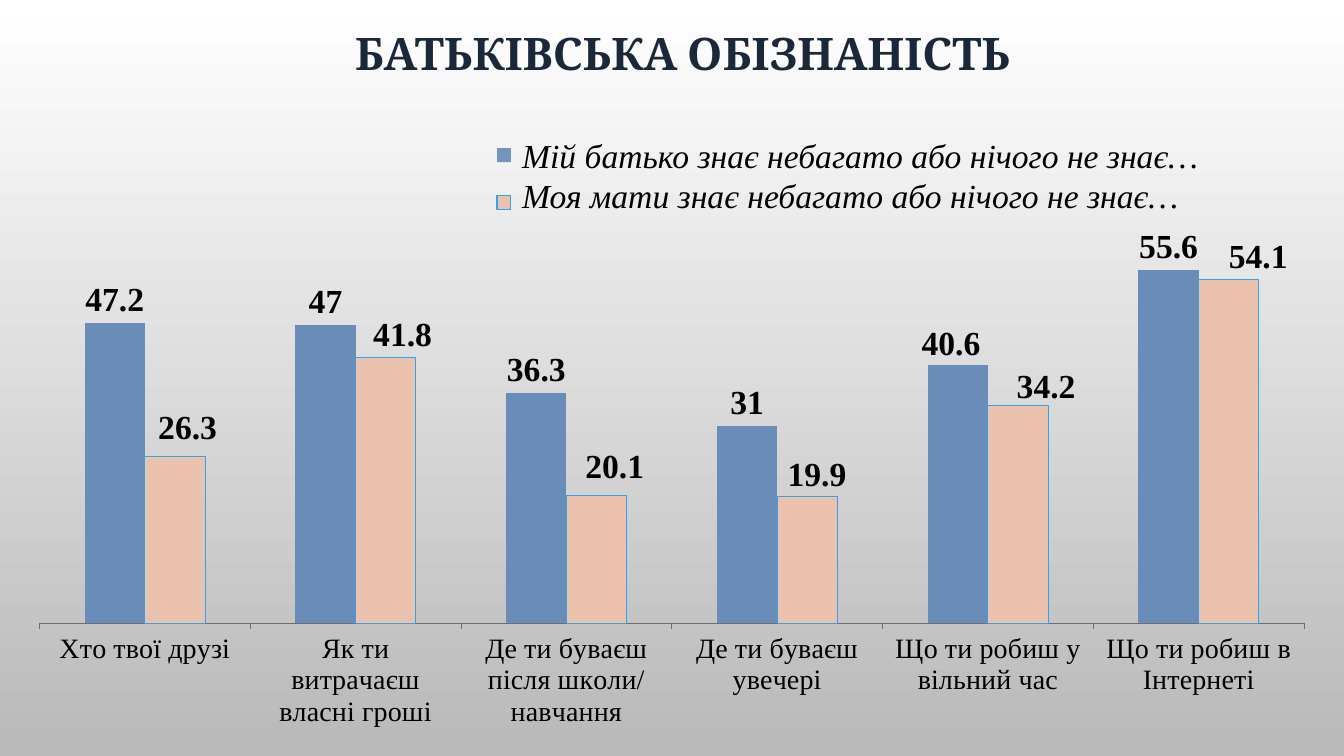
from lxml import etree
from pptx import Presentation
from pptx.chart.data import CategoryChartData
from pptx.dml.color import RGBColor
from pptx.enum.chart import XL_CHART_TYPE, XL_LABEL_POSITION, XL_TICK_MARK
from pptx.enum.shapes import MSO_SHAPE
from pptx.enum.text import MSO_ANCHOR, MSO_AUTO_SIZE, PP_ALIGN
from pptx.oxml.ns import qn
from pptx.util import Pt

COLUMNS = XL_CHART_TYPE.COLUMN_CLUSTERED
OUTSIDE_END = XL_LABEL_POSITION.OUTSIDE_END
TICK_OUT = XL_TICK_MARK.OUTSIDE
TICK_NONE = XL_TICK_MARK.NONE
RECTANGLE = MSO_SHAPE.RECTANGLE
MIDDLE = MSO_ANCHOR.MIDDLE
GROW = MSO_AUTO_SIZE.SHAPE_TO_FIT_TEXT
CENTER = PP_ALIGN.CENTER

COLORS = {"top": "FFFFFF", "bottom": "B9B9B9", "title": "1A2839", "text": "000000",
          "father": "698CB8", "father_key": "7294BD", "mother": "EBC2AD",
          "outline": "2FA3EE", "axis": "6E6E6E"}
SERIF = "Times New Roman"

CATEGORIES = ["Хто твої друзі", "Як ти витрачаєш власні гроші",
              "Де ти буваєш після школи/ навчання", "Де ти буваєш увечері",
              "Що ти робиш у вільний час", "Що ти робиш в Інтернеті"]
FATHER = "Мій батько знає небагато або нічого не знає…"
MOTHER = "Моя мати знає небагато або нічого не знає…"
SERIES = {FATHER: [47.2, 47, 36.3, 31, 40.6, 55.6],
          MOTHER: [26.3, 41.8, 20.1, 19.9, 34.2, 54.1]}
# Label shifts in points from the usual place: {point index: (right, down)}
LABEL_SHIFTS = [{4: (-5, 1)},
                {0: (9, -4), 1: (12, 0), 2: (13, -4), 3: (7, 1), 4: (20, 3), 5: (21, 0)}]


def rgb(name):
    return RGBColor.from_string(COLORS[name])


def set_font(font, size, color="text", name=SERIF, bold=False, italic=False):
    font.size, font.name, font.bold, font.italic = Pt(size), name, bold, italic
    font.color.rgb = rgb(color)


def write(p, text, align=None, indent=0, **fmt):
    p.alignment = align
    if indent:
        pPr = p._p.get_or_add_pPr()
        pPr.set("marL", str(Pt(indent)))
        pPr.set("indent", "0")
    r = p.add_run()
    r.text = text
    set_font(r.font, **fmt)


def add_layout(parent, index, **fractions):
    """Insert a manual c:layout into a chart element."""
    layout = etree.Element(qn("c:layout"))
    manual = etree.SubElement(layout, qn("c:manualLayout"))
    for tag, value in fractions.items():
        etree.SubElement(manual, qn(f"c:{tag}")).set("val", str(value))
    parent.insert(index, layout)


class Deck:
    def __init__(self, width, height):
        self.prs = Presentation()
        self.prs.slide_width, self.prs.slide_height = Pt(width), Pt(height)
        self.s = self.prs.slides.add_slide(self.prs.slide_layouts[5])

    def background(self, top, bottom):
        fill = self.s.background.fill
        fill.gradient()
        fill.gradient_angle = 270
        for stop, name in zip(fill.gradient_stops, (top, bottom)):
            stop.color.rgb = rgb(name)

    def frame(self, sp, top_inset=0):
        tf = sp.text_frame
        tf.word_wrap = True
        tf.margin_left = tf.margin_right = tf.margin_bottom = 0
        tf.margin_top = Pt(top_inset)
        tf.auto_size = GROW
        return tf

    def title(self, text, x, y, w, h):
        sp = self.s.shapes.title
        sp.left, sp.top, sp.width, sp.height = Pt(x), Pt(y), Pt(w), Pt(h)
        tf = self.frame(sp, 5)
        tf.vertical_anchor = MIDDLE
        write(tf.paragraphs[0], text, CENTER, indent=25, size=32,
              color="title", name="Cambria", bold=True)

    def lines(self, texts, x, y, w, h):
        tf = self.frame(self.s.shapes.add_textbox(Pt(x), Pt(y), Pt(w), Pt(h)))
        for i, text in enumerate(texts):
            p = tf.add_paragraph() if i else tf.paragraphs[0]
            write(p, text, indent=1, size=24, italic=True)

    def key(self, x, y, size, fill, line=None):
        sp = self.s.shapes.add_shape(RECTANGLE, Pt(x), Pt(y), Pt(size), Pt(size))
        sp.shadow.inherit = False
        self.paint(sp, fill, line)

    def paint(self, item, fill, line=None):
        item.fill.solid()
        item.fill.fore_color.rgb = rgb(fill)
        if line:
            item.line.color.rgb = rgb(line)
            item.line.width = Pt(0.75)
        else:
            item.line.fill.background()

    def chart(self, x, y, w, h):
        data = CategoryChartData()
        data.categories = CATEGORIES
        for name, values in SERIES.items():
            data.add_series(name, values)
        chart = self.s.shapes.add_chart(COLUMNS, Pt(x), Pt(y), Pt(w), Pt(h), data).chart
        chart.has_legend = chart.has_title = False
        set_font(chart.font, 18, name="Calibri")

        plot_area = chart._chartSpace.chart.plotArea
        for old in plot_area.findall(qn("c:layout")):
            plot_area.remove(old)
        add_layout(plot_area, 0, layoutTarget="inner", xMode="edge", yMode="edge",
                   x=0.02, y=0.03, w=0.96, h=0.75)

        axis = chart.category_axis
        axis.major_tick_mark, axis.minor_tick_mark = TICK_OUT, TICK_NONE
        axis.format.line.color.rgb = rgb("axis")
        axis.format.line.width = Pt(0.75)
        set_font(axis.tick_labels.font, 20)
        values = chart.value_axis
        values.minimum_scale, values.maximum_scale = 0, 60
        values.has_major_gridlines = values.visible = False

        plot = chart.plots[0]
        plot.gap_width, plot.overlap, plot.vary_by_categories = 150, 0, False
        looks = [("father", None), ("mother", "outline")]
        for series, look, shifts in zip(plot.series, looks, LABEL_SHIFTS):
            self.paint(series.format, *look)
            labels = series.data_labels
            labels.show_value, labels.position = True, OUTSIDE_END
            set_font(labels.font, 24, bold=True)
            for i, (dx, dy) in shifts.items():
                label = series.points[i].data_label
                label.position = OUTSIDE_END
                set_font(label.font, 24, bold=True)
            for dLbl, (dx, dy) in zip(labels._element.findall(qn("c:dLbl")), shifts.values()):
                add_layout(dLbl, 1, x=round(dx / w, 4), y=round(dy / h, 4))


def main():
    deck = Deck(960, 540)
    deck.background("top", "bottom")
    deck.title("БАТЬКІВСЬКА ОБІЗНАНІСТЬ", 0, 13, 950, 44)
    deck.chart(9.4, 162, 941, 363)
    deck.key(355, 105.8, 10, "father_key")
    deck.key(355, 139.7, 10, "mother", "outline")
    deck.lines([FATHER, MOTHER], 372, 96.5, 548, 58)
    deck.prs.save("out.pptx")


if __name__ == "__main__":
    main()
